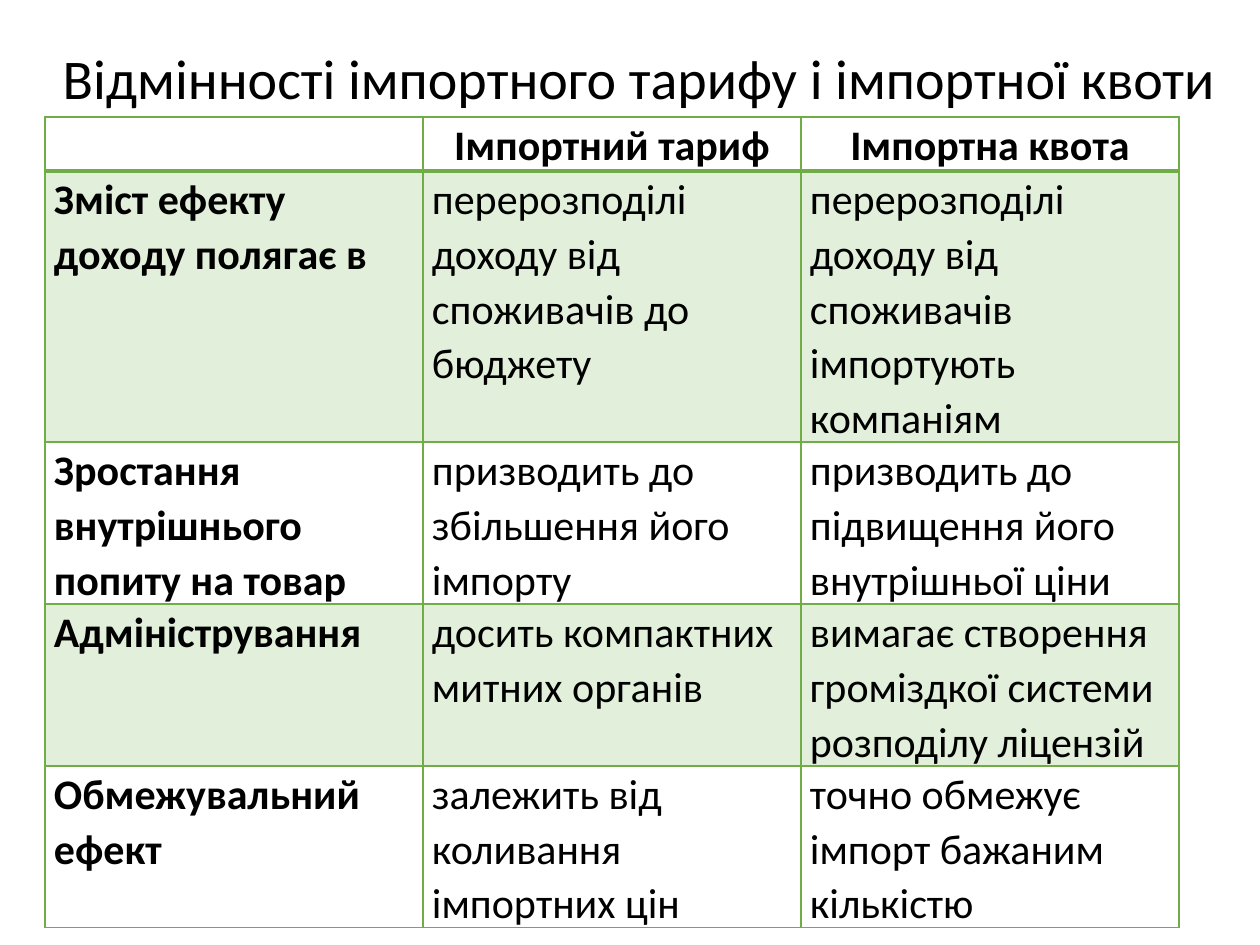
from lxml.etree import SubElement
from pptx import Presentation
from pptx.dml.color import RGBColor
from pptx.enum.text import MSO_ANCHOR, PP_ALIGN
from pptx.oxml.ns import qn
from pptx.util import Pt

TITLE = "Відмінності імпортного тарифу і імпортної квоти"
COMPARISON = [
    ("", "Імпортний тариф", "Імпортна квота"),
    ("Зміст ефекту доходу полягає в",
     "перерозподілі доходу від споживачів до бюджету",
     "перерозподілі доходу від споживачів імпортують компаніям"),
    ("Зростання внутрішнього попиту на товар",
     "призводить до збільшення його імпорту",
     "призводить до підвищення його внутрішньої ціни"),
    ("Адміністрування",
     "досить компактних митних органів",
     "вимагає створення громіздкої системи розподілу ліцензій"),
    ("Обмежувальний ефект",
     "залежить від коливання імпортних цін",
     "точно обмежує імпорт бажаним кількістю"),
]
ROW_HEIGHTS = [53, 271, 162, 161, 162]
COLUMN_WIDTH = 378
LEFT, TITLE_TOP, TABLE_TOP = 45, 37, 117
TITLE_WIDTH, TITLE_HEIGHT = 1189, 81
GREEN, PALE_GREEN, WHITE, BLACK = "70AD47", "E2EFDA", "FFFFFF", "000000"


def px(length):
    return round(length * 914400 / 126)


def color(value):
    return RGBColor.from_string(value)


def apply(target, values):
    for name, value in values.items():
        setattr(target, name, value)


def write(frame, text, size, bold, align, spacing):
    paragraph = frame.paragraphs[0]
    apply(paragraph, {"alignment": align, "line_spacing": spacing})
    run = paragraph.add_run()
    run.text = text
    apply(run.font, {"size": Pt(size), "bold": bold, "name": "Calibri"})
    run.font.color.rgb = color(BLACK)


def add_border(cell, side, points):
    line = SubElement(cell._tc.get_or_add_tcPr(), qn(f"a:ln{side}"), w=str(Pt(points)))
    SubElement(SubElement(line, qn("a:solidFill")), qn("a:srgbClr"), val=GREEN)


def add_title(slide):
    frame = slide.shapes.add_textbox(
        px(LEFT), px(TITLE_TOP), px(TITLE_WIDTH), px(TITLE_HEIGHT)).text_frame
    frame.word_wrap = False
    write(frame, TITLE, 32, False, PP_ALIGN.CENTER, 1.0)


def add_comparison(slide):
    columns = len(COMPARISON[0])
    table = slide.shapes.add_table(
        len(COMPARISON), columns, px(LEFT), px(TABLE_TOP),
        px(COLUMN_WIDTH * columns), px(sum(ROW_HEIGHTS))).table
    for column in table.columns:
        column.width = px(COLUMN_WIDTH)
    for r, (labels, height) in enumerate(zip(COMPARISON, ROW_HEIGHTS)):
        table.rows[r].height = px(height)
        borders = {"L": 1, "R": 1, "T": 2 if r == 1 else 1, "B": 2 if r == 0 else 1}
        for c, label in enumerate(labels):
            cell = table.cell(r, c)
            apply(cell, {"margin_left": px(9), "margin_right": px(9),
                         "margin_top": 0, "margin_bottom": 0,
                         "vertical_anchor": MSO_ANCHOR.TOP})
            for side, points in borders.items():
                add_border(cell, side, points)
            cell.fill.solid()
            cell.fill.fore_color.rgb = color(PALE_GREEN if r % 2 else WHITE)
            if label:
                write(cell.text_frame, label, 24, r == 0 or c == 0,
                      PP_ALIGN.LEFT if r else PP_ALIGN.CENTER, 1.07)


def main():
    presentation = Presentation()
    apply(presentation, {"slide_width": px(1260), "slide_height": px(945)})
    slide = presentation.slides.add_slide(presentation.slide_layouts[6])
    add_title(slide)
    add_comparison(slide)
    presentation.save("out.pptx")


if __name__ == "__main__":
    main()
